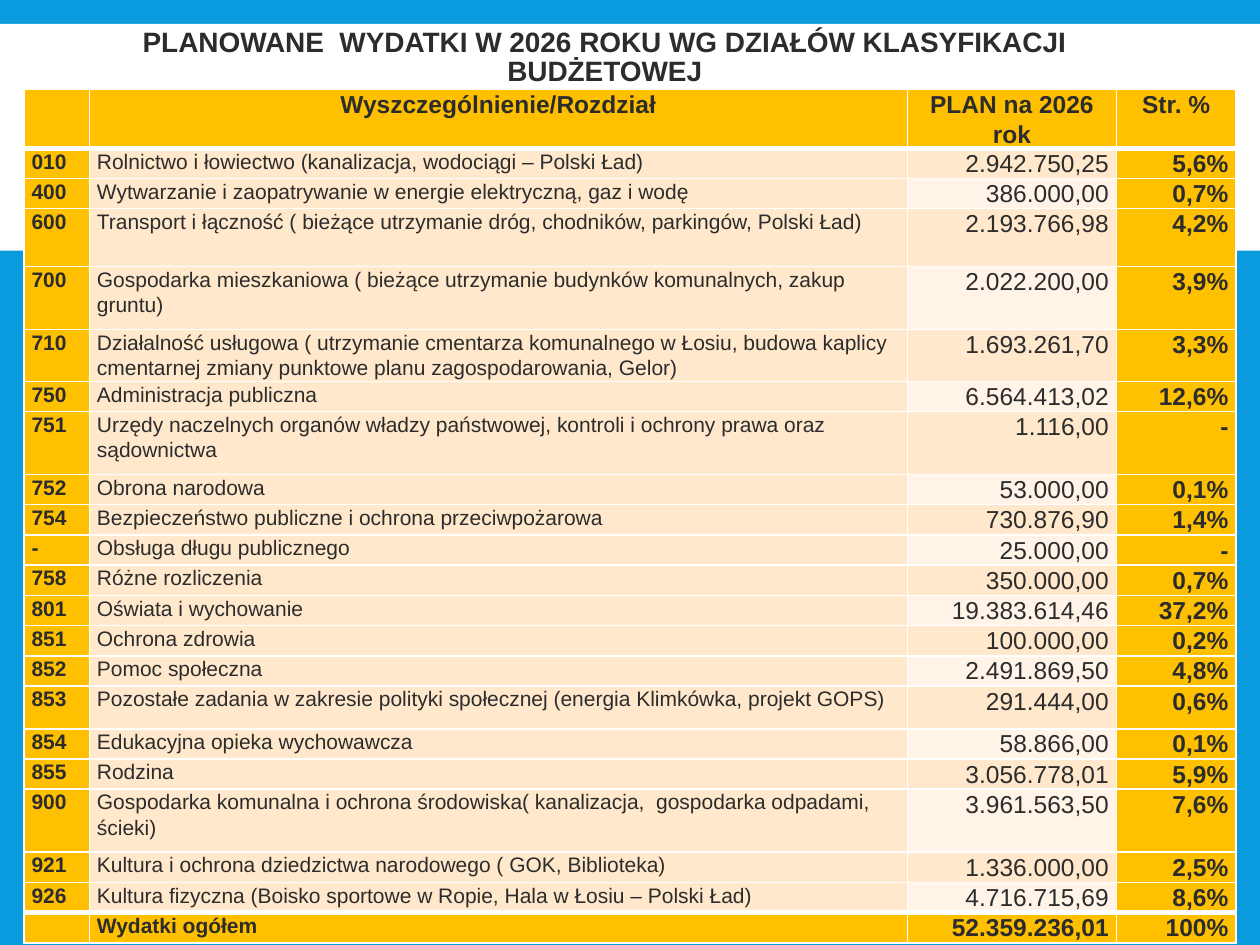
from dataclasses import dataclass

from lxml import etree
from pptx import Presentation
from pptx.dml.color import RGBColor
from pptx.enum.shapes import MSO_SHAPE
from pptx.enum.text import MSO_ANCHOR, MSO_AUTO_SIZE, PP_ALIGN
from pptx.oxml.ns import qn
from pptx.util import Inches, Pt

LEFT, MID, RIGHT = PP_ALIGN.LEFT, PP_ALIGN.CENTER, PP_ALIGN.RIGHT
RECT = MSO_SHAPE.RECTANGLE
CENTRE = MSO_ANCHOR.MIDDLE
NO_FIT = MSO_AUTO_SIZE.NONE
TITLE_ONLY = 5
WIDE, HIGH = 10, 7.5


@dataclass(frozen=True)
class Theme:
    font: str = "Arial"
    back: str = "099BDD"
    white: str = "FFFFFF"
    ink: str = "2C2C2C"
    gold: str = "FFC000"
    peach: str = "FFE8CC"
    cream: str = "FFF4E7"
    title: int = 16
    large: int = 14
    small: int = 12
    thin: int = 1
    thick: int = 3


THEME = Theme()

TITLE = "PLANOWANE  WYDATKI W 2026 ROKU WG DZIAŁÓW KLASYFIKACJI BUDŻETOWEJ"
HEAD = ("", "Wyszczególnienie/Rozdział", "PLAN na 2026 rok", "Str. %")
TOTAL = ("", "Wydatki ogółem", "52.359.236,01", "100%")
BODY = [
    ("010", "Rolnictwo i łowiectwo (kanalizacja, wodociągi – Polski Ład)", "2.942.750,25", "5,6%"),
    ("400", "Wytwarzanie i zaopatrywanie w energie elektryczną, gaz i wodę", "386.000,00", "0,7%"),
    ("600", "Transport i łączność ( bieżące utrzymanie dróg, chodników, parkingów, Polski Ład)",
     "2.193.766,98", "4,2%"),
    ("700", "Gospodarka mieszkaniowa ( bieżące utrzymanie budynków komunalnych, zakup gruntu)",
     "2.022.200,00", "3,9%"),
    ("710", "Działalność usługowa ( utrzymanie cmentarza komunalnego w Łosiu, budowa kaplicy "
     "cmentarnej zmiany punktowe planu zagospodarowania, Gelor)", "1.693.261,70", "3,3%"),
    ("750", "Administracja publiczna", "6.564.413,02", "12,6%"),
    ("751", "Urzędy naczelnych organów władzy państwowej, kontroli i ochrony prawa oraz sądownictwa",
     "1.116,00", "-"),
    ("752", "Obrona narodowa", "53.000,00", "0,1%"),
    ("754", "Bezpieczeństwo publiczne i ochrona przeciwpożarowa", "730.876,90", "1,4%"),
    ("-", "Obsługa długu publicznego", "25.000,00", "-"),
    ("758", "Różne rozliczenia", "350.000,00", "0,7%"),
    ("801", "Oświata i wychowanie", "19.383.614,46", "37,2%"),
    ("851", "Ochrona zdrowia", "100.000,00", "0,2%"),
    ("852", "Pomoc społeczna", "2.491.869,50", "4,8%"),
    ("853", "Pozostałe zadania w zakresie polityki społecznej (energia Klimkówka, projekt GOPS)",
     "291.444,00", "0,6%"),
    ("854", "Edukacyjna opieka wychowawcza", "58.866,00", "0,1%"),
    ("855", "Rodzina", "3.056.778,01", "5,9%"),
    ("900", "Gospodarka komunalna i ochrona środowiska( kanalizacja,  gospodarka odpadami, ścieki)",
     "3.961.563,50", "7,6%"),
    ("921", "Kultura i ochrona dziedzictwa narodowego ( GOK, Biblioteka)", "1.336.000,00", "2,5%"),
    ("926", "Kultura fizyczna (Boisko sportowe w Ropie, Hala w Łosiu – Polski Ład)",
     "4.716.715,69", "8,6%"),
]
COLS = (0.52, 6.5, 1.66, 0.95)
ROW = 0.24
HEAD_ROW = 0.46
TALL = {"600": 0.46, "700": 0.5, "710": 0.41, "751": 0.5, "853": 0.34, "900": 0.5}


def paint(fill, tint):
    fill.solid()
    fill.fore_color.rgb = RGBColor.from_string(tint)


def write(frame, text, size=THEME.small, bold=False, align=LEFT, space=1.07):
    """Put one formatted paragraph in a text frame."""
    frame.word_wrap = True
    para = frame.paragraphs[0]
    para.alignment = align
    para.line_spacing = space
    if not text:
        # An empty cell still takes its height from the end mark
        etree.SubElement(para._p, qn("a:endParaRPr"), sz=str(size * 100))
        return
    run = para.add_run()
    run.text = text
    font = run.font
    font.name, font.size, font.bold = THEME.font, Pt(size), bold
    font.color.rgb = RGBColor.from_string(THEME.ink)


def edge(cell, top, low):
    """Draw the four white borders of a cell."""
    props = cell._tc.get_or_add_tcPr()
    for side, width in zip("LRTB", (THEME.thin, THEME.thin, top, low)):
        line = etree.SubElement(props, qn("a:ln" + side), w=str(Pt(width)))
        fill = etree.SubElement(line, qn("a:solidFill"))
        etree.SubElement(fill, qn("a:srgbClr"), val=THEME.white)


def add_band(slide, box):
    band = slide.shapes.add_shape(RECT, *map(Inches, box))
    band.shadow.inherit = False
    paint(band.fill, THEME.white)
    band.line.fill.background()
    # Send the band behind the title
    slide.shapes._spTree.insert(2, band._element)


def add_title(slide, box):
    title = slide.shapes.title
    title.left, title.top, title.width, title.height = map(Inches, box)
    frame = title.text_frame
    frame.auto_size = NO_FIT
    frame.vertical_anchor = CENTRE
    write(frame, TITLE, size=THEME.title, bold=True, align=MID, space=0.85)


def add_budget(slide, box):
    rows = [HEAD, *BODY, TOTAL]
    last = len(rows) - 1
    table = slide.shapes.add_table(len(rows), len(COLS), *map(Inches, box)).table
    table.horz_banding = False
    table.last_row = True
    for col, share in zip(table.columns, COLS):
        col.width = Inches(box[2] * share / sum(COLS))

    for r, row in enumerate(rows):
        head, total = r == 0, r == last
        table.rows[r].height = Inches(HEAD_ROW if head else TALL.get(row[0], ROW))
        top = THEME.thick if r in (1, last) else THEME.thin
        low = THEME.thick if r in (0, last - 1) else THEME.thin
        for c, text in enumerate(row):
            cell = table.cell(r, c)
            cell.margin_left = cell.margin_right = Inches(0.06)
            cell.margin_top = cell.margin_bottom = 0
            edge(cell, top, low)
            strong = head or total or c in (0, 3)
            pale = THEME.cream if c == 2 and r % 2 == 0 else THEME.peach
            paint(cell.fill, THEME.gold if strong else pale)
            write(cell.text_frame, text, bold=strong,
                  size=THEME.large if head or c > 1 else THEME.small,
                  align=MID if head else RIGHT if c > 1 else LEFT)


def main():
    deck = Presentation()
    deck.slide_width, deck.slide_height = Inches(WIDE), Inches(HIGH)
    slide = deck.slides.add_slide(deck.slide_layouts[TITLE_ONLY])
    paint(slide.background.fill, THEME.back)
    add_band(slide, (0, 0.19, WIDE, 0.24 * HIGH))
    add_title(slide, (0.98, 0.44, 7.64, 0.05))
    add_budget(slide, (0.19, 0.71, WIDE - 2 * 0.19, 6.77))
    deck.save("out.pptx")


if __name__ == "__main__":
    main()
